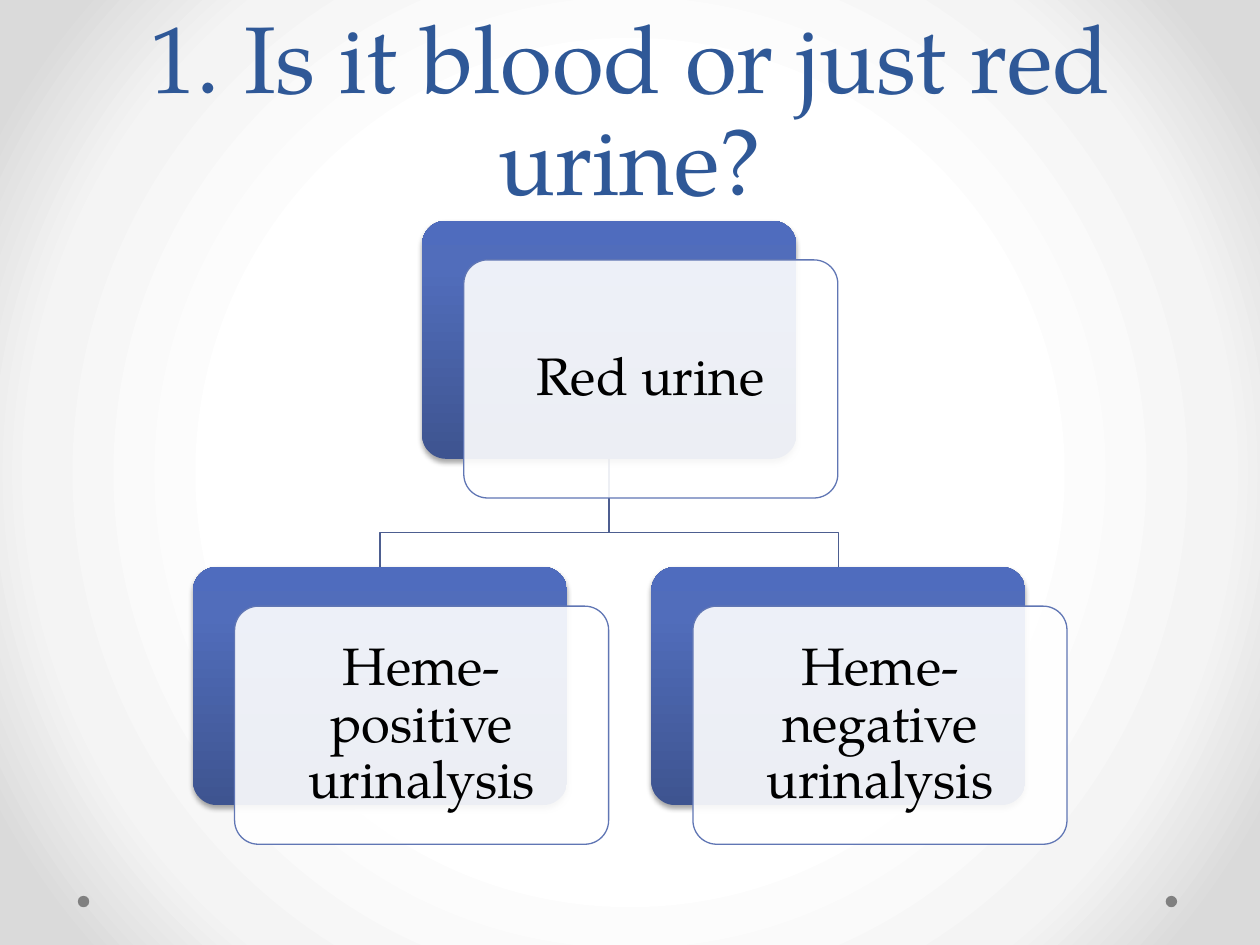
from lxml import etree
from pptx import Presentation
from pptx.dml.color import RGBColor
from pptx.enum.shapes import MSO_SHAPE
from pptx.enum.text import MSO_ANCHOR, PP_ALIGN
from pptx.oxml.ns import qn
from pptx.util import Cm, Pt

OVAL = MSO_SHAPE.OVAL
ROUND = MSO_SHAPE.ROUNDED_RECTANGLE
MIDDLE = MSO_ANCHOR.MIDDLE
BOTTOM = MSO_ANCHOR.BOTTOM
CENTER = PP_ALIGN.CENTER

HUES = {
    "title": "2F5897", "text": "000000", "dot": "808080", "link": "4D5E90",
    "edge": "6076B4", "card": "FFFFFF", "shade": "000000",
}
GLOW = [(50, "FFFFFF"), (76, "F4F4F4"), (92, "DADADA")]
BLUES = [(0, "3E5490"), (80, "516DBB"), (100, "4F6CBE")]

CARD_W, CARD_H = 7.54, 4.8
SHIFT_X, SHIFT_Y = 0.84, 0.79
ROOT_X, ROOT_Y = 8.51, 4.45
STEP_X, STEP_Y = 4.62, 6.98
BEND = 1.48


def add(node, tag, **items):
    return etree.SubElement(node, qn(tag), {k: str(v) for k, v in items.items()})


class Deck:
    def __init__(self, font):
        self.font = font
        self.show = Presentation()
        self.show.slide_width = Cm(25.4)
        self.show.slide_height = Cm(19.05)
        self.slide = self.show.slides.add_slide(self.show.slide_layouts[6])

    def hue(self, name):
        return RGBColor.from_string(HUES[name])

    def blend(self, owner, root, stops, round_out=False):
        owner.fill.gradient()
        grad = next(root.iter(qn("a:gradFill")))
        for part in list(grad):
            grad.remove(part)
        row = add(grad, "a:gsLst")
        for spot, tone in stops:
            add(add(row, "a:gs", pos=spot * 1000), "a:srgbClr", val=tone)
        if round_out:
            ring = add(grad, "a:path", path="circle")
            add(ring, "a:fillToRect", l=50000, t=50000, r=50000, b=50000)
        else:
            add(grad, "a:lin", ang=270 * 60000, scaled=0)

    def back(self, stops):
        ground = self.slide.background
        self.blend(ground, self.slide.element, stops, True)

    def shape(self, kind, x, y, w, h):
        form = self.slide.shapes.add_shape(kind, Cm(x), Cm(y), Cm(w), Cm(h))
        form.shadow.inherit = False
        form.line.fill.background()
        if kind == ROUND:
            form.adjustments[0] = 0.1
        return form

    def dot(self, x, y, size):
        form = self.shape(OVAL, x, y, size, size)
        form.fill.solid()
        form.fill.fore_color.rgb = self.hue("dot")

    def label(self, form, words, size, tone, anchor, space, pad):
        frame = form.text_frame
        frame.word_wrap = True
        frame.vertical_anchor = anchor
        frame.margin_left = frame.margin_right = Cm(pad)
        frame.margin_top = frame.margin_bottom = Cm(pad)
        para = frame.paragraphs[0]
        para.alignment = CENTER
        para.line_spacing = space
        run = para.add_run()
        run.text = words
        run.font.name = self.font
        run.font.size = Pt(size)
        run.font.color.rgb = self.hue(tone)

    def title(self, words, x, y, w, h):
        box = self.slide.shapes.add_textbox(Cm(x), Cm(y), Cm(w), Cm(h))
        self.label(box, words, 54, "title", BOTTOM, Pt(58), 0.13)

    def link(self, points):
        spots = [(Cm(x), Cm(y)) for x, y in points]
        pen = self.slide.shapes.build_freeform(*spots[0])
        pen.add_line_segments(spots[1:], close=False)
        form = pen.convert_to_shape()
        form.shadow.inherit = False
        form.fill.background()
        form.line.color.rgb = self.hue("link")
        form.line.width = Pt(0.75)

    def card(self, words, x, y):
        rear = self.shape(ROUND, x, y, CARD_W, CARD_H)
        self.blend(rear, rear.element, BLUES)
        cast = add(next(rear.element.iter(qn("a:effectLst"))), "a:outerShdw",
                   blurRad=Pt(3.1), dist=Pt(1.8), dir=90 * 60000, rotWithShape=0)
        tone = add(cast, "a:srgbClr", val=HUES["shade"])
        add(tone, "a:alpha", val=35000)

        front = self.shape(ROUND, x + SHIFT_X, y + SHIFT_Y, CARD_W, CARD_H)
        front.fill.solid()
        front.fill.fore_color.rgb = self.hue("card")
        tint = next(front.element.spPr.iter(qn("a:srgbClr")))
        add(tint, "a:alpha", val=90000)
        front.line.color.rgb = self.hue("edge")
        front.line.width = Pt(0.75)
        self.label(front, words, 30, "text", MIDDLE, 0.9, 0.3)


def main():
    deck = Deck("TeX Gyre Pagella")
    deck.back(GLOW)
    for x in (23.5, 1.57):
        deck.dot(x, 18.06, 0.23)
    deck.title("1. Is it blood or just red urine?", 1.27, 0, 22.86, 4.45)

    mid, base, low = ROOT_X + CARD_W / 2, ROOT_Y + CARD_H, ROOT_Y + STEP_Y
    for side in (1, -1):
        end = mid + side * STEP_X
        turn = base + BEND
        deck.link([(mid, base), (mid, turn), (end, turn), (end, low)])

    deck.card("Red urine", ROOT_X, ROOT_Y)
    for side, words in ((-1, "Heme-positive urinalysis"),
                        (1, "Heme-negative urinalysis")):
        deck.card(words, ROOT_X + side * STEP_X, low)
    deck.show.save("out.pptx")


if __name__ == "__main__":
    main()
